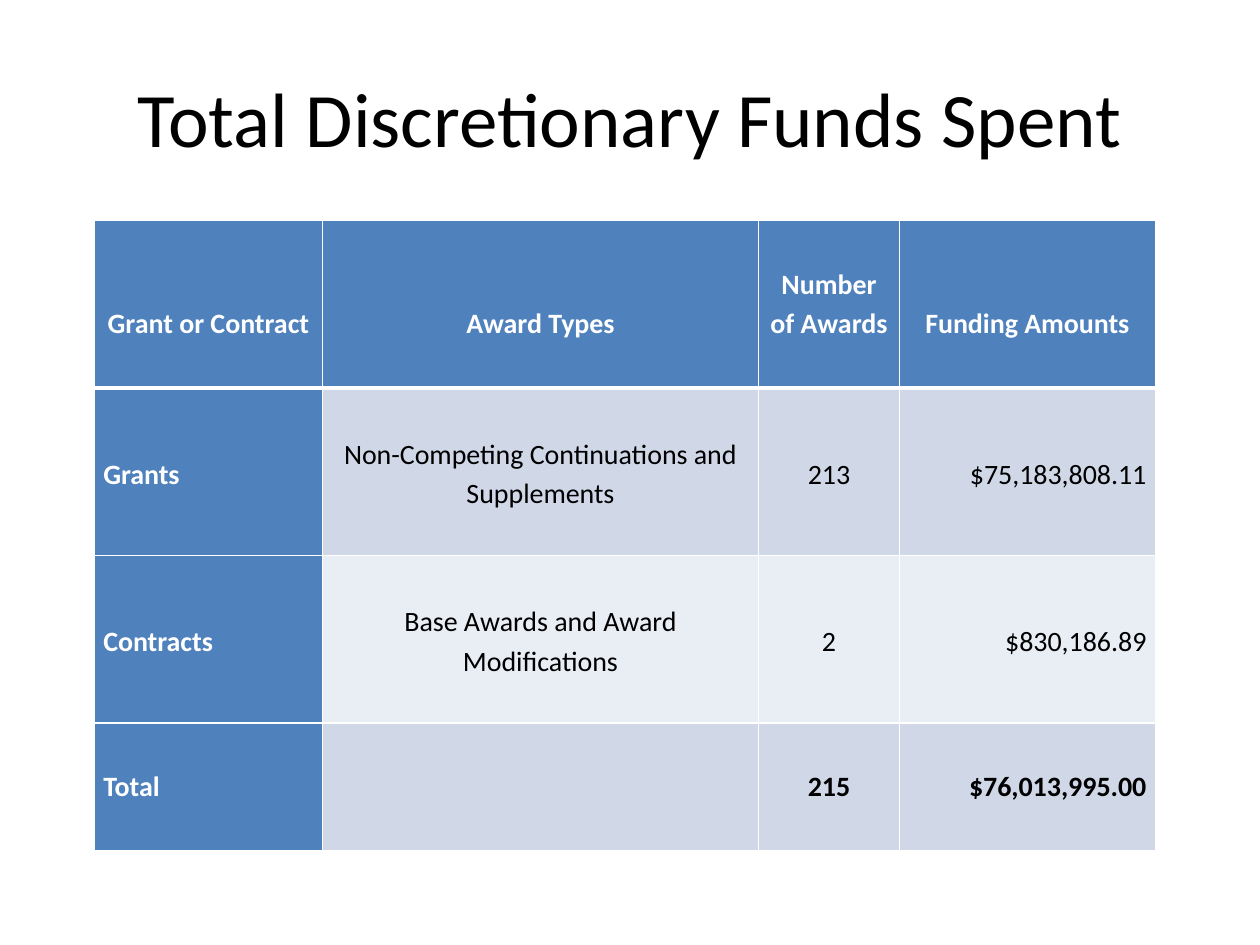
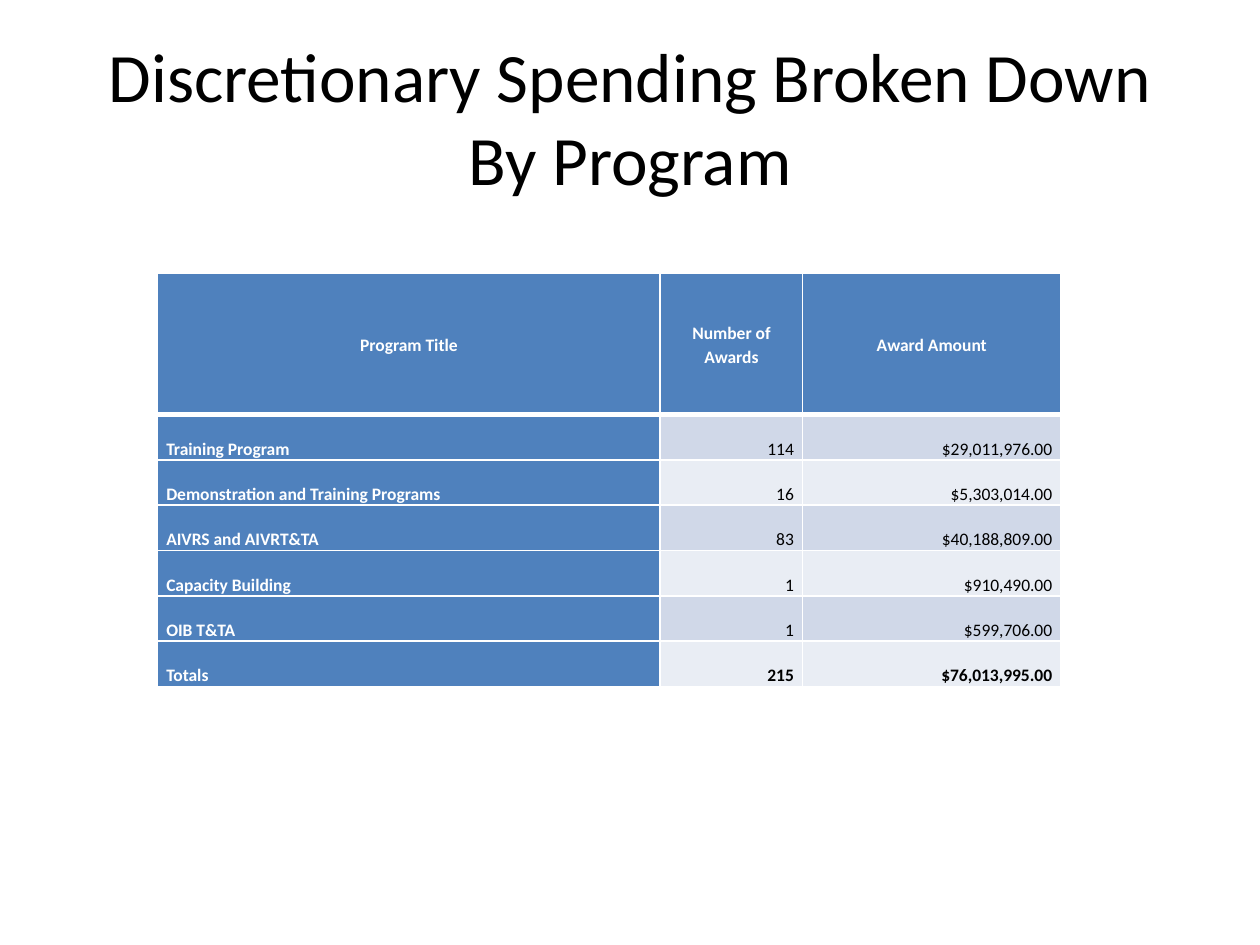
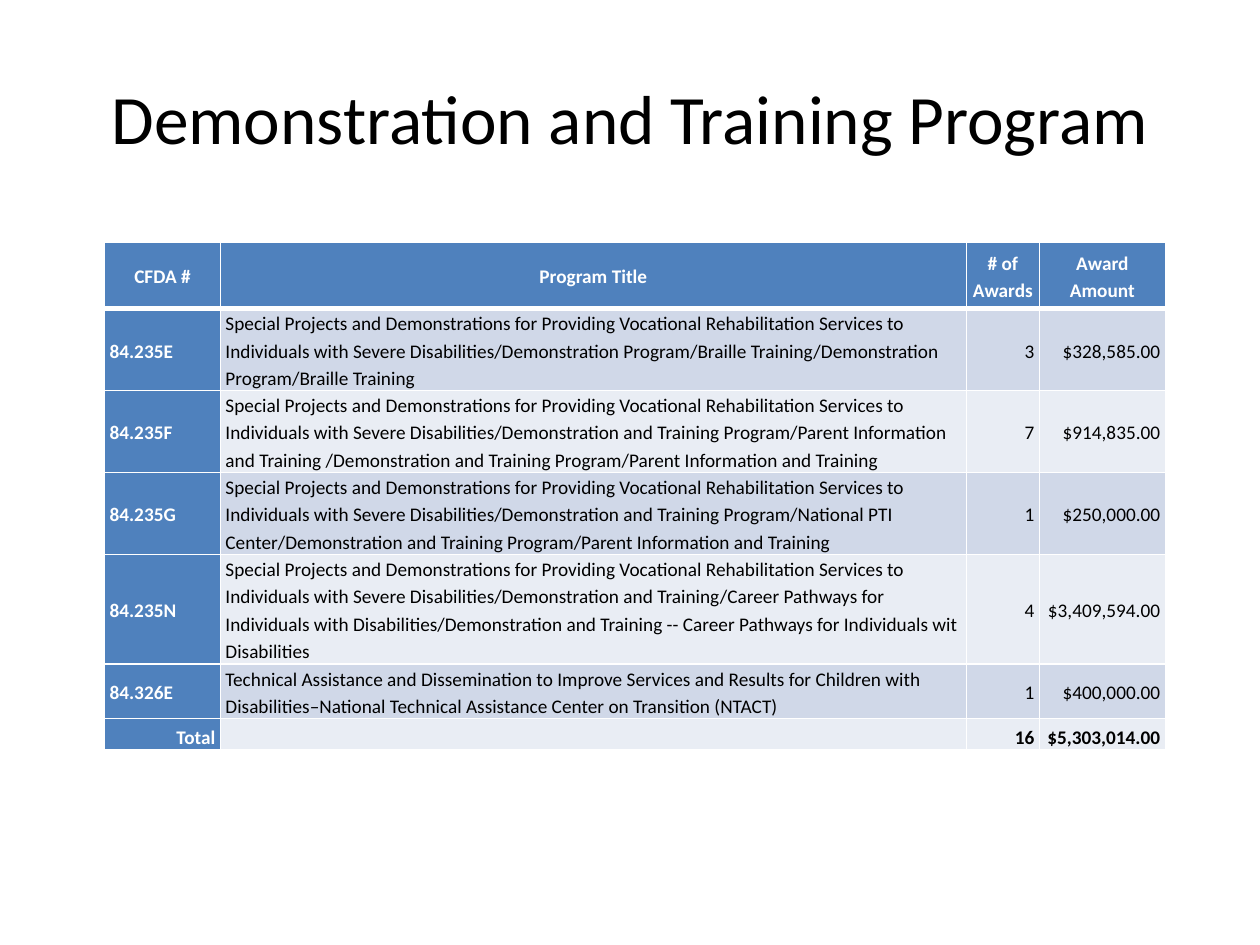
from dataclasses import dataclass

from lxml.etree import SubElement
from pptx import Presentation
from pptx.dml.color import RGBColor
from pptx.enum.text import MSO_ANCHOR as ANCHOR, PP_ALIGN as ALIGN
from pptx.oxml.ns import qn
from pptx.util import Inches, Pt

# Shared look
FONT = "Calibri"
BLACK, WHITE = "000000", "FFFFFF"
HEADING_BLUE = "4F81BD"
BANDS = ("D0D8E8", "E9EDF4")
LINE_SPACING = 1.15
THIN, THICK = 1, 3
LEFT, CENTER, RIGHT = ALIGN.LEFT, ALIGN.CENTER, ALIGN.RIGHT
MIDDLE, BOTTOM = ANCHOR.MIDDLE, ANCHOR.BOTTOM
TITLE_ONLY = 5

# Programme wording that several rows share
SPECIAL_PROJECTS = (
    "Special Projects and Demonstrations for Providing Vocational Rehabilitation "
    "Services to Individuals with Severe Disabilities/Demonstration "
)
PARENT_TRAINING = "Demonstration and Training Program/Parent Information and Training"


@dataclass
class Style:
    """Text settings of one table; anchors are for header, body and total rows."""
    size: float
    side_margin: float
    aligns: tuple
    anchors: tuple
    bottom_gap: float = 0
    total_label_align: ALIGN = LEFT


def color(hex_string):
    return RGBColor.from_string(hex_string)


def style_font(font, size, hex_color, bold=False):
    font.name, font.size, font.bold = FONT, Pt(size), bold
    font.color.rgb = color(hex_color)


def add_titled_slide(prs, title, size):
    slide = prs.slides.add_slide(prs.slide_layouts[TITLE_ONLY])
    heading = slide.shapes.title
    heading.left, heading.top = int(prs.slide_width * 0.05), int(prs.slide_height * 0.04)
    heading.width, heading.height = int(prs.slide_width * 0.9), Inches(1.25)
    frame = heading.text_frame
    frame.text = title
    frame.vertical_anchor = MIDDLE
    frame.paragraphs[0].alignment = CENTER
    style_font(frame.paragraphs[0].runs[0].font, size, BLACK)
    return slide


def set_borders(cell, top, bottom):
    properties = cell._tc.get_or_add_tcPr()
    for side, width in (("L", THIN), ("R", THIN), ("T", top), ("B", bottom)):
        line = SubElement(properties, qn(f"a:ln{side}"), w=str(Pt(width)))
        fill = SubElement(line, qn("a:solidFill"))
        SubElement(fill, qn("a:srgbClr"), val=WHITE)


def fill_cell(cell, text, fill, align, anchor, style, hex_color, bold):
    cell.fill.solid()
    cell.fill.fore_color.rgb = color(fill)
    cell.margin_left = cell.margin_right = Inches(style.side_margin)
    cell.margin_top = 0
    cell.margin_bottom = Inches(style.bottom_gap if anchor == BOTTOM else 0)
    cell.vertical_anchor = anchor
    paragraph = cell.text_frame.paragraphs[0]
    paragraph.alignment, paragraph.line_spacing = align, LINE_SPACING
    if text:
        paragraph.text = text
        style_font(paragraph.runs[0].font, style.size, hex_color, bold)
    else:  # keep the default text size from stretching the row
        paragraph._p.get_or_add_endParaRPr().set("sz", str(style.size * 100))


def add_funding_table(slide, left, top, widths, heights, rows, style):
    frame = slide.shapes.add_table(
        len(rows), len(widths), Inches(left), Inches(top),
        Inches(sum(widths)), Inches(sum(heights)))
    table = frame.table
    for column, width in zip(table.columns, widths):
        column.width = Inches(width)
    for row, height in zip(table.rows, heights):
        row.height = Inches(height)

    header_anchor, body_anchor, total_anchor = style.anchors
    last = len(rows) - 1
    for r, texts in enumerate(rows):
        is_header, is_total = r == 0, r == last
        anchor = header_anchor if is_header else total_anchor if is_total else body_anchor
        for c, text in enumerate(texts):
            is_heading = is_header or c == 0
            align = CENTER if is_header else style.aligns[c]
            if is_total and c == 0:
                align = style.total_label_align
            cell = table.cell(r, c)
            set_borders(cell, THICK if r == 1 else THIN, THICK if is_header else THIN)
            fill_cell(cell, text,
                      HEADING_BLUE if is_heading else BANDS[(r - 1) % 2],
                      align, anchor, style,
                      WHITE if is_heading else BLACK, is_heading or is_total)


def add_total_funds(prs):
    slide = add_titled_slide(prs, "Total Discretionary Funds Spent", 44)
    rows = [
        ("Grant or Contract", "Award Types", "Number of Awards", "Funding Amounts"),
        ("Grants", "Non-Competing Continuations and Supplements", "213", "$75,183,808.11"),
        ("Contracts", "Base Awards and Award Modifications", "2", "$830,186.89"),
        ("Total", "", "215", "$76,013,995.00"),
    ]
    style = Style(16, 0.07, (LEFT, CENTER, CENTER, RIGHT),
                  (BOTTOM, MIDDLE, BOTTOM), bottom_gap=0.37)
    add_funding_table(slide, 0.75, 1.75, (1.81, 3.46, 1.12, 2.03),
                      [1.33] * 3 + [1.01], rows, style)


def add_program_spending(prs):
    slide = add_titled_slide(prs, "Discretionary Spending Broken Down By Program", 39.6)
    rows = [
        ("Program Title", "Number of Awards", "Award Amount"),
        ("Training Program", "114", "$29,011,976.00"),
        ("Demonstration and Training Programs", "16", "$5,303,014.00"),
        ("AIVRS and AIVRT&TA", "83", "$40,188,809.00"),
        ("Capacity Building", "1", "$910,490.00"),
        ("OIB T&TA", "1", "$599,706.00"),
        ("Totals", "215", "$76,013,995.00"),
    ]
    style = Style(10, 0.07, (LEFT, RIGHT, RIGHT), (MIDDLE, BOTTOM, BOTTOM))
    add_funding_table(slide, 1.25, 2.17, (3.99, 1.13, 2.05),
                      [1.12] + [0.36] * 6, rows, style)


def add_demonstration_program(prs):
    slide = add_titled_slide(prs, "Demonstration and Training Program", 39.6)
    rows = [
        ("CFDA #", "Program Title", "# of Awards", "Award Amount"),
        ("84.235E", SPECIAL_PROJECTS + "Program/Braille Training/Demonstration "
         "Program/Braille Training", "3", "$328,585.00"),
        ("84.235F", SPECIAL_PROJECTS + "and Training Program/Parent Information "
         "and Training /" + PARENT_TRAINING, "7", "$914,835.00"),
        ("84.235G", SPECIAL_PROJECTS + "and Training Program/National PTI Center/"
         + PARENT_TRAINING, "1", "$250,000.00"),
        ("84.235N", SPECIAL_PROJECTS + "and Training/Career Pathways for Individuals "
         "with Disabilities/Demonstration and Training -- Career Pathways for "
         "Individuals wit Disabilities", "4", "$3,409,594.00"),
        ("84.326E", "Technical Assistance and Dissemination to Improve Services and "
         "Results for Children with Disabilities–National Technical Assistance Center "
         "on Transition (NTACT)", "1", "$400,000.00"),
        ("Total", "", "16", "$5,303,014.00"),
    ]
    style = Style(11, 0.04, (LEFT, LEFT, RIGHT, RIGHT),
                  (MIDDLE, MIDDLE, BOTTOM), total_label_align=RIGHT)
    add_funding_table(slide, 0.83, 1.92, (0.92, 5.92, 0.58, 1),
                      [0.53] + [0.65] * 3 + [0.87, 0.43, 0.25], rows, style)


def main():
    prs = Presentation()
    prs.slide_width, prs.slide_height = Inches(10), Inches(7.5)
    add_total_funds(prs)
    add_program_spending(prs)
    add_demonstration_program(prs)
    prs.save("out.pptx")


if __name__ == "__main__":
    main()
